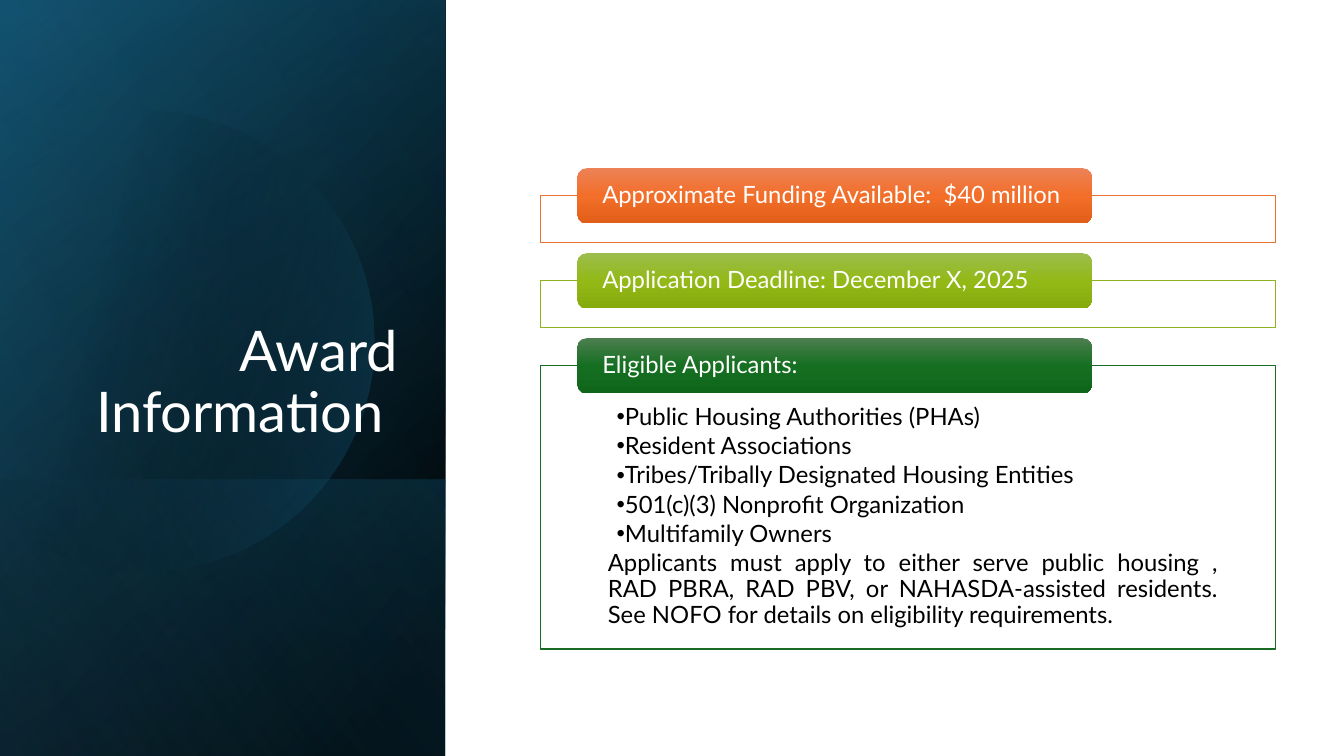
import math
import pptx
import pptx.util
import pptx.oxml
import pptx.oxml.ns
import pptx.dml.color
import pptx.enum.shapes
import pptx.enum.text

Pt = pptx.util.Pt
qn = pptx.oxml.ns.qn
kind = pptx.enum.shapes.MSO_SHAPE
text = pptx.enum.text
hues = {
    "white": "FFFFFF", "black": "000000", "navy": "104862", "teal": "156082", "sky": "46B1E1",
    "orange": "E97132", "lime": "8EB21E", "green": "196B24",
}
tints = {
    "orange": ("ED8257", "F26E29", "E25F1A"),
    "lime": ("9CBD4E", "92B916", "85AB0D"),
    "green": ("4D7E50", "156F21", "0F661B"),
}


def shade(shape, stops, angle):
    shape.shadow.inherit = False
    shape.line.fill.background()
    shape.fill.background()
    marks = "".join(
        f'<a:gs pos="{pos * 1000}"><a:srgbClr val="{hue}">'
        f'<a:alpha val="{alpha * 1000}"/></a:srgbClr></a:gs>'
        for pos, hue, alpha in stops)
    grad = pptx.oxml.parse_xml(
        '<a:gradFill xmlns:a="http://schemas.openxmlformats.org/drawingml/2006/main" '
        f'rotWithShape="1"><a:gsLst>{marks}</a:gsLst>'
        f'<a:lin ang="{angle * 60000}" scaled="0"/></a:gradFill>')
    props = shape._element.spPr
    props.replace(props.find(qn("a:noFill")), grad)


def style(para, size, hue, after=0):
    para.line_spacing = 0.9
    para.space_before = Pt(0)
    para.space_after = Pt(after)
    for run in para.runs:
        run.font.name = "Lato"
        run.font.size = Pt(size)
        run.font.color.rgb = pptx.dml.color.RGBColor.from_string(hues[hue])


deck = pptx.Presentation()
deck.slide_width, deck.slide_height = Pt(960), Pt(540)
slide = deck.slides.add_slide(deck.slide_layouts[1])
shapes = slide.shapes
title, body = slide.placeholders

wide = 318
panels = [
    (540, 50, [(8, "black", 100), (100, "navy", 100)]),
    (540, 30, [(0, "black", 0), (99, "teal", 46)]),
    (197.3, 130, [(2, "teal", 29), (100, "black", 30)]),
    None,
    (540, 120, [(0, "black", 0), (99, "sky", 11)]),
]
for panel in panels:
    if panel:
        tall, angle, stops = panel
        shape = shapes.add_shape(
            kind.RECTANGLE, Pt((wide - tall) / 2), Pt(540 - (tall + wide) / 2), Pt(tall), Pt(wide))
        shape.rotation = 90
        shape._element.spPr.find(qn("a:xfrm")).set("flipH", "1")
    else:
        mid_x, mid_y, radius = 103, 243.5, 164.5
        limit = math.acos(-mid_x / radius)
        turns = [limit * (step / 60 - 1) for step in range(121)]
        points = [(Pt(mid_x + radius * math.cos(turn)), Pt(mid_y + radius * math.sin(turn)))
                  for turn in turns]
        build = shapes.build_freeform(*points[0])
        build.add_line_segments(points[1:], close=True)
        shape = build.convert_to_shape()
        angle, stops = 14, [(29, "black", 0), (100, "teal", 43)]
    shade(shape, [(pos, hues[hue], alpha) for pos, hue, alpha in stops], angle)

shapes._spTree.append(title._element)
title.left, title.top, title.width, title.height = Pt(46), Pt(132.5), Pt(245.5), Pt(188.6)
frame = title.text_frame
frame.text = "Award Information "
frame.word_wrap = True
frame.auto_size = text.MSO_AUTO_SIZE.NONE
frame.vertical_anchor = text.MSO_ANCHOR.BOTTOM
frame.paragraphs[0].alignment = text.PP_ALIGN.RIGHT
style(frame.paragraphs[0], 40, "white")

rows = [
    ("Approximate Funding Available:  $40 million", "orange"),
    ("Application Deadline: December X, 2025", "lime"),
    ("Eligible Applicants:", "green"),
]
for row, (label, hue) in enumerate(rows):
    top = 120.2 + 60.7 * row
    if hue == "green":
        box = body
        shapes._spTree.append(body._element)
        high = 202.5
    else:
        box = shapes.add_shape(kind.RECTANGLE, 0, 0, 0, 0)
        box.shadow.inherit = False
        high = 33.8
    box.left, box.top, box.width, box.height = Pt(386), Pt(top + 19.5), Pt(525), Pt(high)
    box.fill.solid()
    box.fill.fore_color.rgb = pptx.dml.color.RGBColor.from_string(hues["white"])
    box.line.color.rgb = pptx.dml.color.RGBColor.from_string(hues[hue])
    box.line.width = Pt(1)

    tab = shapes.add_shape(kind.ROUNDED_RECTANGLE, Pt(412.5), Pt(top), Pt(367.5), Pt(39.4))
    shade(tab, [(50 * step, tint, 100) for step, tint in enumerate(tints[hue])], 90)
    frame = tab.text_frame
    frame.text = label
    frame.word_wrap = True
    frame.vertical_anchor = text.MSO_ANCHOR.MIDDLE
    frame.margin_left = frame.margin_right = Pt(15.8)
    frame.margin_top = frame.margin_bottom = 0
    frame.paragraphs[0].alignment = text.PP_ALIGN.LEFT
    style(frame.paragraphs[0], 17, "white")

items = [
    "Public Housing Authorities (PHAs)",
    "Resident Associations",
    "Tribes/Tribally Designated Housing Entities",
    "501(c)(3) Nonprofit Organization",
    "Multifamily Owners",
    "Applicants must apply to either serve public housing , RAD PBRA, RAD PBV, "
    "or NAHASDA-assisted residents. See NOFO for details on eligibility requirements. ",
]
frame = body.text_frame
frame.text = "\n".join(items)
frame.word_wrap = True
frame.auto_size = text.MSO_AUTO_SIZE.NONE
frame.vertical_anchor = text.MSO_ANCHOR.TOP
frame.margin_left = frame.margin_right = Pt(41)
frame.margin_top, frame.margin_bottom = Pt(28), Pt(9.4)
for para in frame.paragraphs:
    last = para.text == items[-1]
    para.alignment = text.PP_ALIGN.JUSTIFY if last else text.PP_ALIGN.LEFT
    style(para, 17, "black", 2.55)
    props = para._p.get_or_add_pPr()
    props.set("marL", str(Pt(7.2 if last else 13.5)))
    props.set("indent", "0")
    bullet = props.makeelement(qn("a:buNone" if last else "a:buChar"), {} if last else {"char": "•"})
    props.append(bullet)

deck.save("out.pptx")
